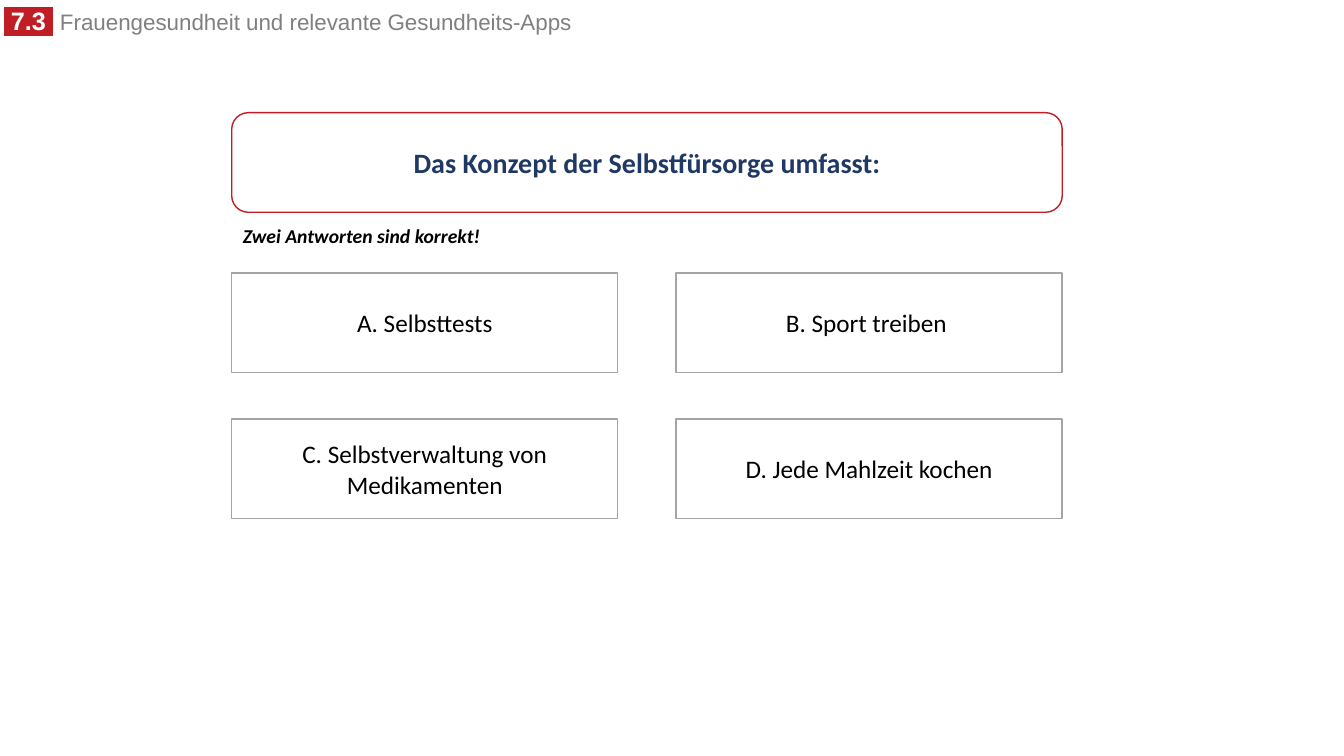
from lxml import etree
from pptx import Presentation
from pptx.dml.color import RGBColor
from pptx.enum.shapes import MSO_SHAPE
from pptx.enum.text import MSO_ANCHOR, MSO_AUTO_SIZE, PP_ALIGN
from pptx.oxml.ns import qn
from pptx.util import Cm, Pt

RECT, ROUND = MSO_SHAPE.RECTANGLE, MSO_SHAPE.ROUNDED_RECTANGLE
MIDDLE, GROW = MSO_ANCHOR.MIDDLE, MSO_AUTO_SIZE.SHAPE_TO_FIT_TEXT
CENTER = PP_ALIGN.CENTER

COLORS = {"red": "C01E24", "navy": "203864", "gray": "808080",
          "edge": "A5A5A5", "white": "FFFFFF", "black": "000000"}
NUMBER = " 7.3 "
TOPIC = "Frauengesundheit und relevante Gesundheits-Apps"
QUESTION = "Das Konzept der Selbstfürsorge umfasst:"
HINT = "Zwei Antworten sind korrekt!"
ANSWERS = ["A. Selbsttests", "B. Sport treiben ",
           "C. Selbstverwaltung von Medikamenten", "D. Jede Mahlzeit kochen"]

LEFT, WIDTH, HEIGHT = 5.84, 20.93, 2.51
CARD, GAP_X, GAP_Y = 9.73, 1.47, 1.17
ASK_TOP, GRID_TOP = 2.84, 6.88


def color(name):
    """Return the named colour."""
    return RGBColor.from_string(COLORS[name])


def add_run(para, text, size, tint, face="Calibri", bold=False,
            slant=False, mark=None):
    """Add one styled run, with an optional highlight."""
    run = para.add_run()
    run.text = text
    font = run.font
    font.size, font.bold, font.italic = Pt(size), bold, slant
    font.color.rgb = color(tint)
    if mark:
        props = run._r.get_or_add_rPr()
        light = etree.SubElement(props, qn("a:highlight"))
        etree.SubElement(light, qn("a:srgbClr"), val=COLORS[mark])
    font.name = face


def add_label(slide, left, top, width, height, wrap):
    """Add a growing text box and return its first paragraph."""
    box = slide.shapes.add_textbox(Cm(left), Cm(top), Cm(width), Cm(height))
    frame = box.text_frame
    frame.word_wrap, frame.auto_size = wrap, GROW
    return frame.paragraphs[0]


def add_box(slide, kind, left, top, width, edge, text, size, tint, bold=False):
    """Add an outlined box with centred text."""
    box = slide.shapes.add_shape(kind, Cm(left), Cm(top), Cm(width), Cm(HEIGHT))
    box.shadow.inherit = False
    box.fill.solid()
    box.fill.fore_color.rgb = color("white")
    box.line.color.rgb = color(edge)
    box.line.width = Pt(1)
    frame = box.text_frame
    frame.word_wrap, frame.vertical_anchor = True, MIDDLE
    para = frame.paragraphs[0]
    para.alignment = CENTER
    add_run(para, text, size, tint, bold=bold)


def main():
    """Build the quiz slide."""
    deck = Presentation()
    deck.slide_width, deck.slide_height = Cm(33.87), Cm(19.05)
    slide = deck.slides.add_slide(deck.slide_layouts[6])

    head = add_label(slide, -0.15, 0.15, 17.42, 0.89, True)
    head.line_spacing = 0.8
    add_run(head, NUMBER, 18, "white", "Arial", bold=True, mark="red")
    add_run(head, " ", 18, "gray", "Arial")
    add_run(head, TOPIC, 16, "gray", "Arial")

    add_box(slide, ROUND, LEFT, ASK_TOP, WIDTH, "red", QUESTION, 20, "navy", True)
    hint = add_label(slide, 5.87, 5.51, 6.53, 0.86, False)
    add_run(hint, HINT, 14, "black", bold=True, slant=True)

    for i, answer in enumerate(ANSWERS):
        row, col = divmod(i, 2)
        left = LEFT + col * (CARD + GAP_X)
        top = GRID_TOP + row * (HEIGHT + GAP_Y)
        add_box(slide, RECT, left, top, CARD, "edge", answer, 18, "black")

    deck.save("out.pptx")


if __name__ == "__main__":
    main()
